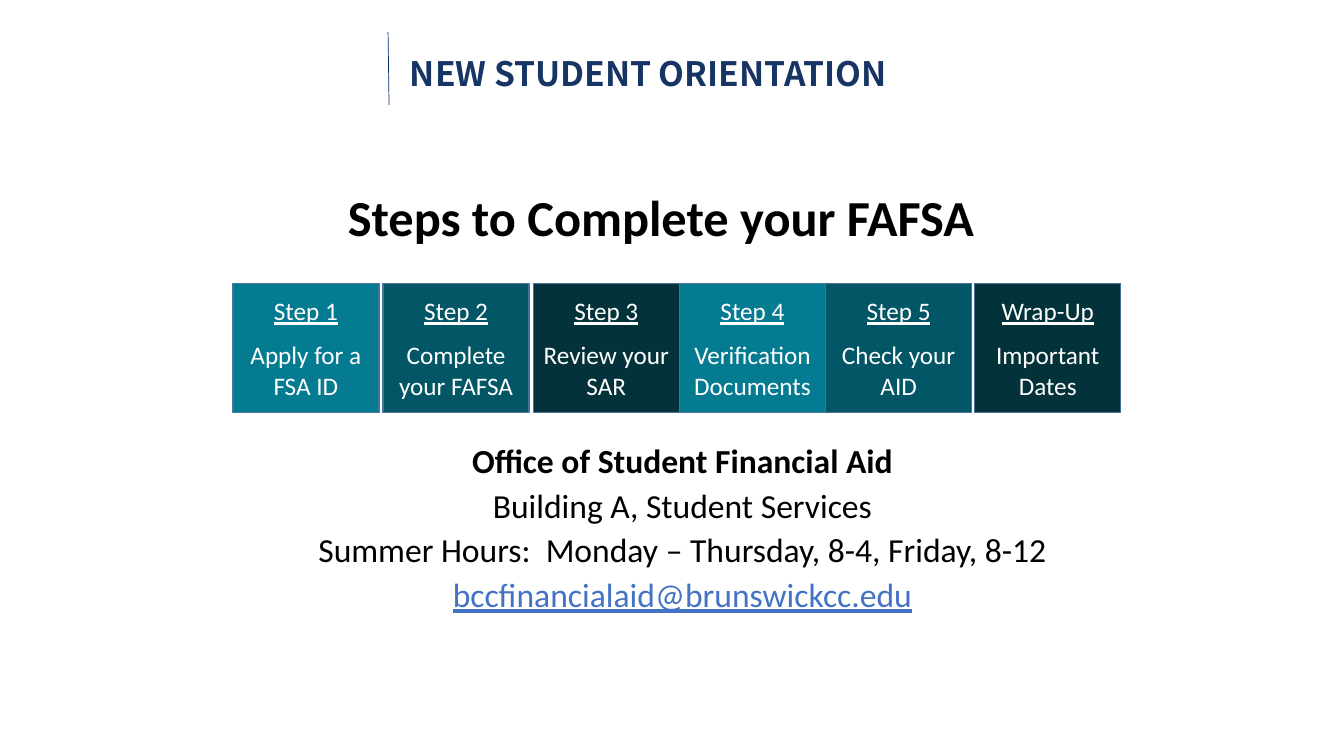
import pptx
import pptx.dml.color
import pptx.enum.shapes
import pptx.enum.text
import pptx.oxml.ns
import pptx.util
from lxml import etree

Pt = pptx.util.Pt
ALIGN = pptx.enum.text.PP_ALIGN
ANCHOR = pptx.enum.text.MSO_ANCHOR

COLORS = {
    "rule": "002A5C",
    "header": "163564",
    "black": "000000",
    "white": "FFFFFF",
    "email": "4472C4",
    "border": "43739E",
    "teal": "047B91",
    "deep": "035665",
    "dark": "03323A",
}

# Left edge, fill, heading, task
STEPS = [
    (166.3, "teal", "Step 1", "Apply for a FSA ID"),
    (273.6, "deep", "Step 2", "Complete your FAFSA"),
    (380.9, "dark", "Step 3", "Review your SAR"),
    (485.3, "teal", "Step 4", "Verification Documents"),
    (589.7, "deep", "Step 5", "Check your AID"),
    (696.2, "dark", "Wrap-Up", "Important Dates"),
]

CONTACT = [
    ("Office of Student Financial Aid", {"bold": True}),
    ("Building A, Student Services", {}),
    ("Summer Hours:  Monday – Thursday, 8-4, Friday, 8-12", {}),
    ("bccfinancialaid@brunswickcc.edu", {"color": "email", "underline": True}),
]


def rgb(name):
    return pptx.dml.color.RGBColor.from_string(COLORS[name])


def set_attributes(target, values):
    for name, value in values.items():
        setattr(target, name, value)


def place(box, left, top, width, height):
    set_attributes(box, {"left": Pt(left), "top": Pt(top),
                         "width": Pt(width), "height": Pt(height)})


def write_span(para, text, size, color="black", name="Calibri", **font):
    span = para.add_run()
    span.text = text
    set_attributes(span.font, {"size": Pt(size), "name": name, **font})
    span.font.color.rgb = rgb(color)


def next_paragraph(frame, index):
    return frame.add_paragraph() if index else frame.paragraphs[0]


def remove_bullet(para):
    properties = para._p.get_or_add_pPr()
    properties.set("marL", "0")
    properties.set("indent", "0")
    etree.SubElement(properties, pptx.oxml.ns.qn("a:buNone"))


def add_header(page):
    rule = page.shapes.add_connector(
        pptx.enum.shapes.MSO_CONNECTOR.STRAIGHT,
        Pt(277.2), Pt(23), Pt(277.9), Pt(74.9))
    rule.line.color.rgb = rgb("rule")
    rule.line.width = Pt(0.5)
    etree.SubElement(rule._element.spPr, pptx.oxml.ns.qn("a:effectLst"))

    box = page.shapes.add_textbox(Pt(285.8), Pt(34.6), Pt(472.3), Pt(36))
    box.text_frame.word_wrap = True
    write_span(box.text_frame.paragraphs[0], "NEW STUDENT ORIENTATION", 24,
               "header", "Noto Sans CJK TC", bold=True)


def fill_title(title):
    place(title, 241.2, 131, 470.9, 92.9)
    set_attributes(title.text_frame, {"vertical_anchor": ANCHOR.TOP,
                                      "margin_top": Pt(6.8)})
    para = title.text_frame.paragraphs[0]
    set_attributes(para, {"alignment": ALIGN.LEFT, "line_spacing": 0.9})
    write_span(para, "Steps to Complete your FAFSA", 36, bold=True)


def fill_contact(body):
    place(body, 81.4, 313.9, 812.2, 141.8)
    for index, (text, font) in enumerate(CONTACT):
        para = next_paragraph(body.text_frame, index)
        set_attributes(para, {"alignment": ALIGN.CENTER, "line_spacing": 0.9,
                              "space_before": Pt(6 if index else 0)})
        remove_bullet(para)
        write_span(para, text, 24, **font)


def add_step(page, left, fill, heading, task):
    box = page.shapes.add_shape(pptx.enum.shapes.MSO_SHAPE.RECTANGLE,
                                Pt(left), Pt(202.3), Pt(104.4), Pt(92.2))
    box.shadow.inherit = False
    box.fill.solid()
    box.fill.fore_color.rgb = rgb(fill)
    box.line.color.rgb = rgb("border")
    box.line.width = Pt(1)
    set_attributes(box.text_frame, {"word_wrap": True,
                                    "vertical_anchor": ANCHOR.MIDDLE})
    for index, text in enumerate((heading, task)):
        para = next_paragraph(box.text_frame, index)
        set_attributes(para, {"alignment": ALIGN.CENTER,
                              "space_before": Pt(10 * index)})
        write_span(para, text, 18, "white", underline=index == 0)


def main():
    deck = pptx.Presentation()
    set_attributes(deck, {"slide_width": Pt(960), "slide_height": Pt(540)})
    page = deck.slides.add_slide(deck.slide_layouts[1])
    add_header(page)
    fill_contact(page.placeholders[1])
    for step in reversed(STEPS):
        add_step(page, *step)
    fill_title(page.shapes.title)
    deck.save("out.pptx")


if __name__ == "__main__":
    main()
